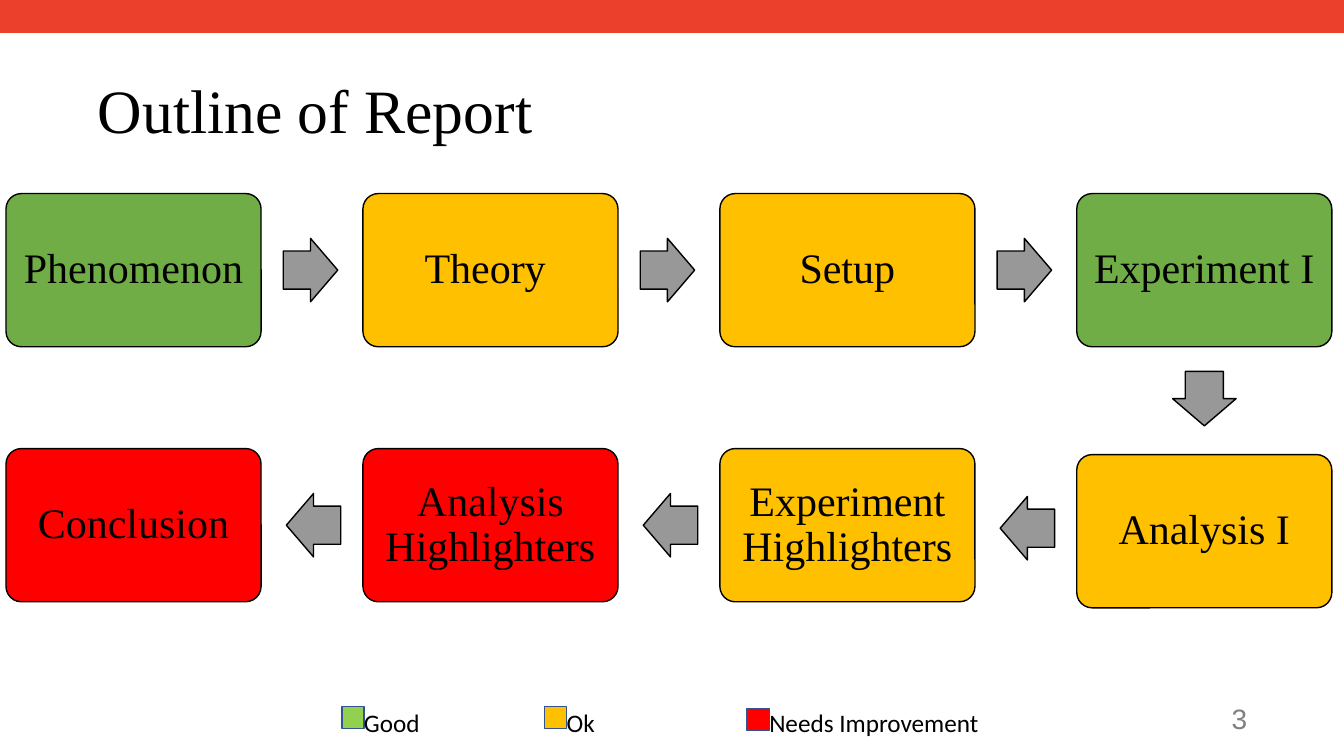
from lxml.etree import SubElement
from pptx import Presentation
from pptx.dml.color import RGBColor as RGB
from pptx.enum.shapes import MSO_CONNECTOR as LINE, MSO_SHAPE as SHAPE
from pptx.enum.text import MSO_ANCHOR as ANCHOR, PP_ALIGN as ALIGN
from pptx.oxml.ns import qn
from pptx.util import Inches, Pt

BLACK = RGB(0x00, 0x00, 0x00)
BAR = RGB(0xEA, 0x40, 0x2C)
GREEN = RGB(0x70, 0xAD, 0x47)
LIME = RGB(0x92, 0xD0, 0x50)
AMBER = RGB(0xFF, 0xC0, 0x00)
RED = RGB(0xFF, 0x00, 0x00)
GRAY = RGB(0x98, 0x98, 0x98)
PALE = RGB(0x80, 0x80, 0x80)
NAVY = RGB(0x32, 0x53, 0x8F)
SERIF = "Times New Roman"

TOP_ROW = [("Phenomenon", GREEN), ("Theory ", AMBER),
           ("Setup", AMBER), ("Experiment I", GREEN)]
LOW_ROW = [("Conclusion", RED), ("Analysis Highlighters", RED),
           ("Experiment Highlighters", AMBER), ("Analysis I", AMBER)]
LEGEND = [("Good", LIME), ("Ok", AMBER), ("Needs Improvement", RED)]
CARD_W, CARD_H, PITCH = 2.53, 1.52, 3.54
ARROW_W, ARROW_H = 0.54, 0.63


def write(shape, text, size, font, color=BLACK, align=ALIGN.LEFT,
          inset=0.05, wrap=True, space=1.0):
    """Put styled, vertically centred text into a shape."""
    frame = shape.text_frame
    frame.word_wrap = wrap
    frame.vertical_anchor = ANCHOR.MIDDLE
    frame.margin_left = frame.margin_right = Inches(inset)
    frame.margin_top = frame.margin_bottom = Inches(inset)
    frame.text = text
    para = frame.paragraphs[0]
    para.alignment = align
    para.line_spacing = space
    style = para.runs[0].font
    style.size, style.name = Pt(size), font
    style.color.rgb = color


def add_text(slide, box, text, size, font, **style):
    """Add a text box."""
    label = slide.shapes.add_textbox(*map(Inches, box))
    write(label, text, size, font, **style)


def add_block(slide, kind, box, fill, line=BLACK):
    """Add a filled and outlined preset shape."""
    block = slide.shapes.add_shape(kind, *map(Inches, box))
    block.shadow.inherit = False
    block.fill.solid()
    block.fill.fore_color.rgb = fill
    block.line.color.rgb = line
    block.line.width = Pt(1)
    return block


def add_arrow(slide, left, top, turn):
    """Add a gray arrow turned by the given angle."""
    box = (left, top, ARROW_W, ARROW_H)
    arrow = add_block(slide, SHAPE.RIGHT_ARROW, box, GRAY)
    arrow.adjustments[0], arrow.adjustments[1] = 0.6, 0.5
    arrow.rotation = turn


def add_card(slide, left, top, text, fill):
    """Add one rounded step of the outline."""
    box = (left, top, CARD_W, CARD_H)
    card = add_block(slide, SHAPE.ROUNDED_RECTANGLE, box, fill)
    card.adjustments[0] = 0.1
    write(card, text, 30, SERIF, align=ALIGN.CENTER, inset=0.12, space=0.9)


def add_row(slide, left, top, steps, turn, gap, drop=0):
    """Add a row of steps with arrows between, the last step set lower."""
    last = len(steps) - 1
    for i, (text, fill) in enumerate(steps):
        x = left + i * PITCH
        add_card(slide, x, top + (drop if i == last else 0), text, fill)
        if i < last:
            shift = drop / 2 if i == last - 1 else 0
            y = top + (CARD_H - ARROW_H) / 2 + shift
            add_arrow(slide, x + CARD_W + gap, y, turn)


def add_flow(slide, left, top):
    """Add both rows and the arrow that joins them."""
    add_row(slide, left, top, TOP_ROW, 0, 0.22)
    add_row(slide, left, top + 2.53, LOW_ROW, 180, 0.25, 0.06)
    mid = left + 3 * PITCH + (CARD_W - ARROW_W) / 2
    add_arrow(slide, mid, top + 1.72, 90)


def add_legend(slide, left, top):
    """Add the colour key."""
    side = 0.22
    for i, (text, fill) in enumerate(LEGEND):
        x = left + i * 2.01
        y = top + (0.02 if fill == RED else 0)
        add_block(slide, SHAPE.RECTANGLE, (x, y, side, side), fill, NAVY)
        add_text(slide, (x + side, top + 0.01, 2.2, 0.3), text, 18,
                 "Calibri", inset=0, wrap=False)


def add_bar(slide, width):
    """Add the thick line along the top edge."""
    y = Inches(0.16)
    bar = slide.shapes.add_connector(LINE.STRAIGHT, 0, y, width, y)
    bar.line.color.rgb = BAR
    bar.line.width = Pt(24)
    SubElement(bar._element.spPr, qn("a:effectLst"))


def main():
    """Build and save the slide."""
    deck = Presentation()
    deck.slide_width, deck.slide_height = Inches(13.33), Inches(7.5)
    slide = deck.slides.add_slide(deck.slide_layouts[6])
    add_bar(slide, deck.slide_width)
    add_text(slide, (0.92, 0.4, 10.82, 1.45), "Outline of Report", 44, SERIF,
             space=0.9)
    add_legend(slide, 3.39, 7.01)
    add_text(slide, (12.16, 6.92, 0.26, 0.42), "3", 20, "Arial", color=PALE,
             align=ALIGN.RIGHT, wrap=False)
    add_flow(slide, 0.06, 1.92)
    deck.save("out.pptx")


if __name__ == "__main__":
    main()
